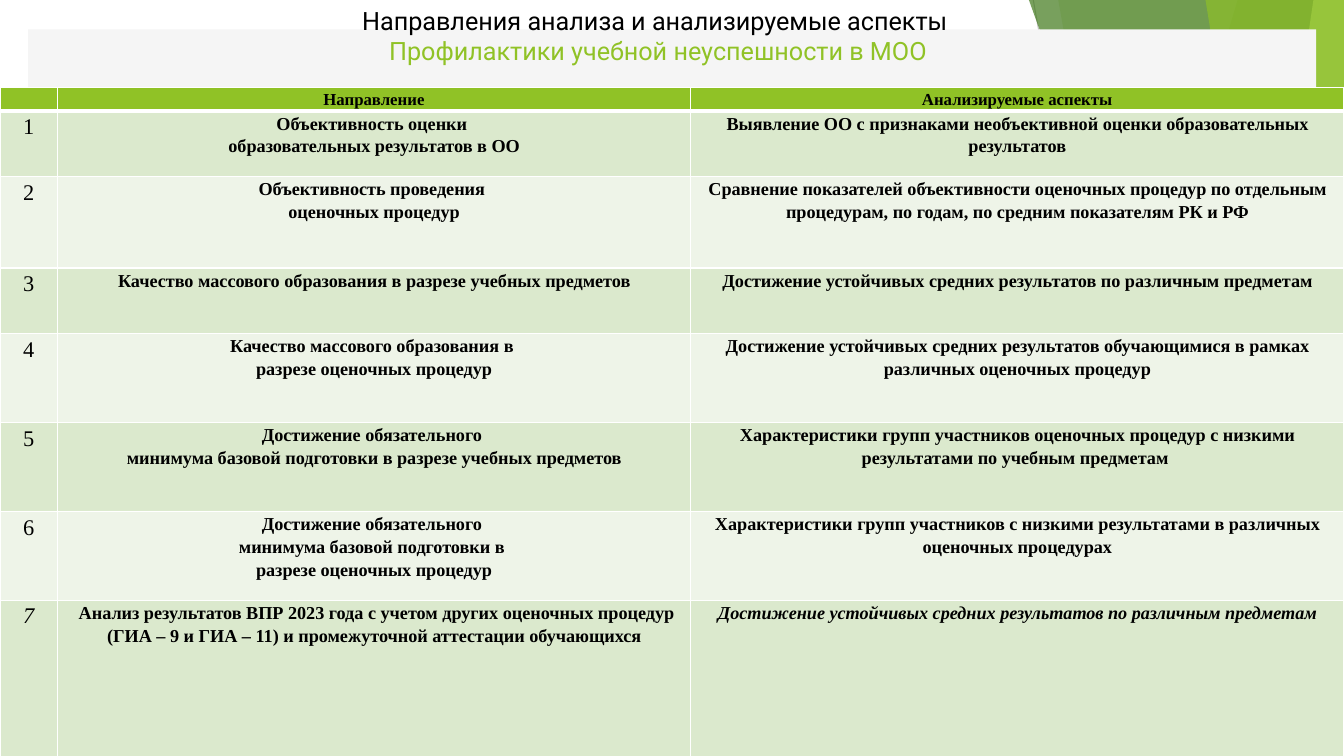
"""Build a slide with a table of analysis directions and the aspects analysed."""
from lxml.etree import SubElement
from pptx import Presentation
from pptx.dml.color import RGBColor
from pptx.enum.shapes import MSO_CONNECTOR as Connector, MSO_SHAPE as Shape
from pptx.enum.text import MSO_ANCHOR as Anchor, PP_ALIGN as Align
from pptx.oxml.ns import qn
from pptx.util import Cm, Pt

WHITE = RGBColor(0xFF, 0xFF, 0xFF)
BLACK = RGBColor(0x00, 0x00, 0x00)
LIME = RGBColor(0x90, 0xC2, 0x26)
GRASS = RGBColor(0x54, 0xA0, 0x21)
FOREST = RGBColor(0x3F, 0x78, 0x19)
PALE_LIME = RGBColor(0xC0, 0xE4, 0x74)
PANEL = RGBColor(0xF5, 0xF5, 0xF5)
GREY = RGBColor(0xBF, 0xBF, 0xBF)
LIGHT_GREY = RGBColor(0xD9, 0xD9, 0xD9)
ODD_ROW = RGBColor(0xDB, 0xE9, 0xCD)
EVEN_ROW = RGBColor(0xEE, 0xF4, 0xE8)
WIDTH, HEIGHT = 33.87, 19.05


def paint(shape, color, opacity=100):
    """Give a shape a plain fill with no line or shadow."""
    shape.shadow.inherit = False
    shape.line.fill.background()
    shape.fill.solid()
    shape.fill.fore_color.rgb = color
    if opacity < 100:
        tint = shape.fill._xPr.find(qn("a:solidFill"))[0]
        SubElement(tint, qn("a:alpha"), val=str(opacity * 1000))


def write(para, text, font, size, color, bold=False, italic=False):
    """Add one styled run to a paragraph."""
    span = para.add_run()
    span.text = text
    span.font.name = font
    span.font.size = Pt(size)
    span.font.color.rgb = color
    span.font.bold = bold
    span.font.italic = italic


deck = Presentation()
deck.slide_width, deck.slide_height = Cm(WIDTH), Cm(HEIGHT)
page = deck.slides.add_slide(deck.slide_layouts[6])

rays = [
    (26.04, 0, 29.41, HEIGHT, GREY),
    (WIDTH, 10.24, 20.62, HEIGHT, LIGHT_GREY),
]
for x1, y1, x2, y2, color in rays:
    ray = page.shapes.add_connector(Connector.STRAIGHT, Cm(x1), Cm(y1), Cm(x2), Cm(y2))
    ray.line.color.rgb = color
    ray.line.width = Pt(0.75)
    SubElement(ray._element.spPr, qn("a:effectLst"))

facets = [
    ("wedge", (31.19, 25.5), LIME, 30),
    ("wedge", (26.67, 30.05), LIME, 20),
    ("triangle", (24.82, 8.46, 9.04, 1), GRASS, 72),
    ("wedge", (25.93, 32.79), FOREST, 70),
    ("wedge", (33.1, 30.28), PALE_LIME, 70),
    ("wedge", (30.38, 33.48), LIME, 65),
    ("triangle", (28.8, 9.98, 5.05, 1), LIME, 80),
    ("triangle", (0, 11.15, 1.24, 0), LIME, 85),
]
for kind, geometry, color, opacity in facets:
    if kind == "wedge":
        top_x, bottom_x = geometry
        outline = page.shapes.build_freeform(Cm(top_x), 0)
        corners = [(WIDTH, 0), (WIDTH, HEIGHT), (bottom_x, HEIGHT)]
        outline.add_line_segments([(Cm(x), Cm(y)) for x, y in corners])
        facet = outline.convert_to_shape()
    else:
        left, top, width, peak = geometry
        facet = page.shapes.add_shape(
            Shape.ISOSCELES_TRIANGLE, Cm(left), Cm(top), Cm(width), Cm(HEIGHT - top))
        facet.adjustments[0] = peak
    paint(facet, color, opacity)

panel = page.shapes.add_shape(Shape.RECTANGLE, Cm(0.71), Cm(0.74), Cm(32.46), Cm(17.6))
paint(panel, PANEL)

title = page.shapes.add_textbox(Cm(0.33), 0, Cm(32.51), Cm(2.34)).text_frame
title.word_wrap = True
title.vertical_anchor = Anchor.TOP
para = title.paragraphs[0]
para.alignment = Align.CENTER
write(para, "Направления анализа и анализируемые аспекты ", "Roboto", 18, BLACK)
para.add_line_break()
write(para, "Профилактики учебной неуспешности в МОО", "Roboto", 18, LIME)

rows = [
    ("", ["Направление"], "Анализируемые аспекты"),
    ("1", ["Объективность оценки ", "образовательных результатов в ОО"],
     "Выявление ОО с признаками необъективной оценки образовательных результатов"),
    ("2", ["Объективность проведения ", "оценочных процедур"],
     "Сравнение показателей объективности оценочных процедур по отдельным процедурам, "
     "по годам, по средним показателям РК и РФ"),
    ("3", ["Качество массового образования в разрезе учебных предметов"],
     "Достижение устойчивых средних результатов по различным предметам"),
    ("4", ["Качество массового образования в ", "разрезе оценочных процедур"],
     "Достижение устойчивых средних результатов обучающимися в рамках "
     "различных оценочных процедур"),
    ("5", ["Достижение обязательного ",
           "минимума базовой подготовки в разрезе учебных предметов"],
     "Характеристики групп участников оценочных процедур с низкими "
     "результатами по учебным предметам "),
    ("6", ["Достижение обязательного ", "минимума базовой подготовки в ",
           "разрезе оценочных процедур"],
     "Характеристики групп участников с низкими результатами в различных "
     "оценочных процедурах"),
    ("7", [" Анализ результатов ВПР 2023 года с учетом других оценочных процедур "
           "(ГИА – 9 и ГИА – 11) и промежуточной аттестации обучающихся"],
     "Достижение устойчивых средних результатов по различным предметам"),
]
column_widths = [1.45, 15.95, 16.47]
row_heights = [0.56, 1.65, 2.31, 1.65, 2.24, 2.24, 2.24, 4.47]
table = page.shapes.add_table(
    len(rows), len(column_widths), 0, Cm(2.21),
    Cm(sum(column_widths)), Cm(sum(row_heights))).table
table.first_row = table.horz_banding = False
for column, width in zip(table.columns, column_widths):
    column.width = Cm(width)
for row, height in zip(table.rows, row_heights):
    row.height = Cm(height)

for r, (number, direction, aspects) in enumerate(rows):
    for c, lines in enumerate([[number], direction, [aspects]]):
        cell = table.cell(r, c)
        cell.margin_left = cell.margin_right = Cm(0.18)
        cell.margin_top = cell.margin_bottom = 0
        for side in "LRTB":
            heavy = (r, side) in [(0, "B"), (1, "T")]
            border = SubElement(cell._tc.get_or_add_tcPr(), qn(f"a:ln{side}"),
                                w=str(Pt(3 if heavy else 1)))
            SubElement(SubElement(border, qn("a:solidFill")), qn("a:srgbClr"), val=str(WHITE))
        cell.fill.solid()
        cell.fill.fore_color.rgb = LIME if r == 0 else ODD_ROW if r % 2 else EVEN_ROW
        size = 12 if r == 0 else 16 if c == 0 else 13
        italic = r == len(rows) - 1 and c != 1
        for i, line in enumerate(lines):
            para = cell.text_frame.add_paragraph() if i else cell.text_frame.paragraphs[0]
            para.alignment = Align.CENTER
            para.line_spacing = 1.15
            if line:
                write(para, line, "Times New Roman", size, BLACK, c > 0, italic)
            else:
                SubElement(para._p, qn("a:endParaRPr"), sz=str(size * 100))

deck.save("out.pptx")
